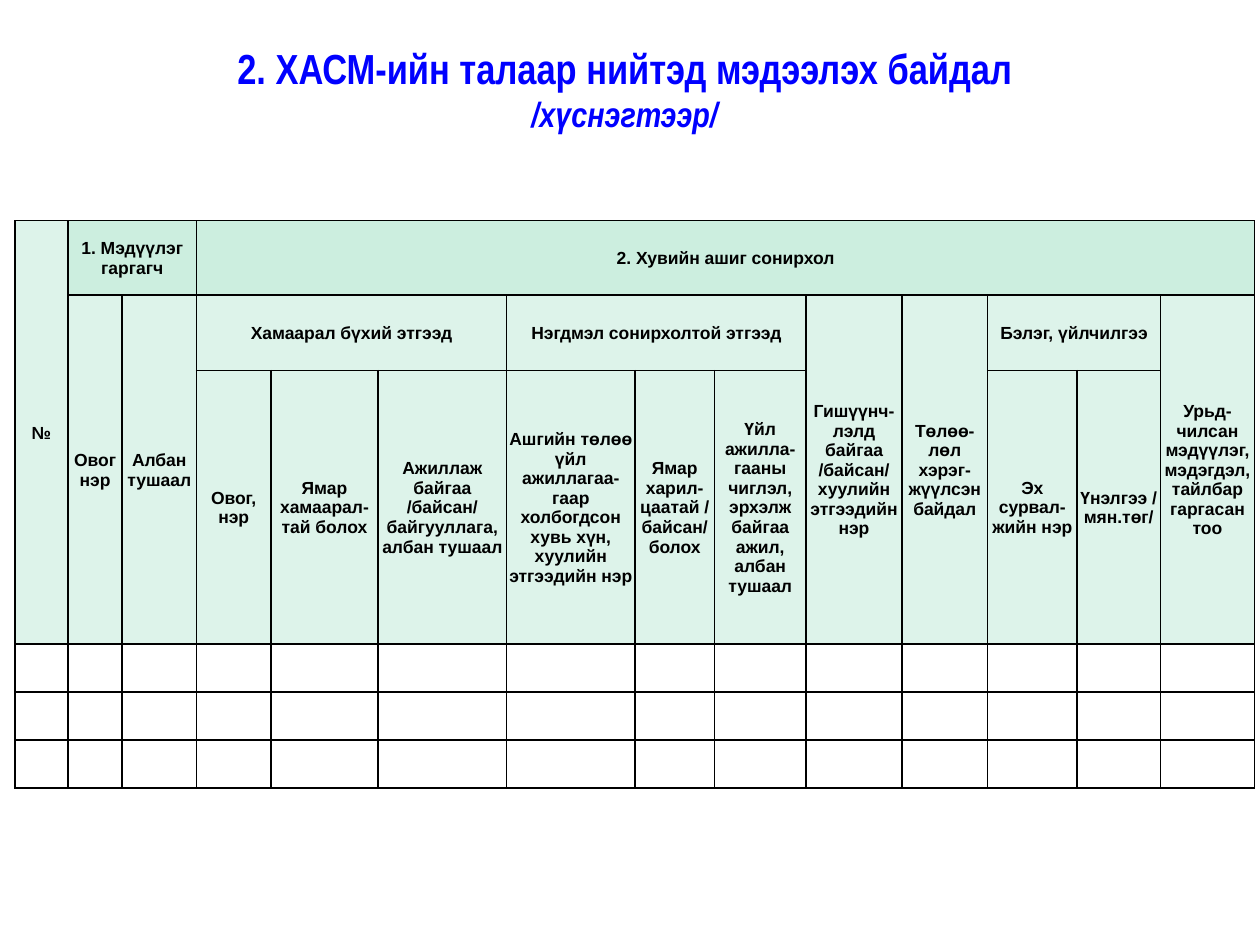
"""Build a slide with an empty form for publishing private interest declarations."""
from lxml import etree
from pptx import Presentation
from pptx import util as u
from pptx.dml.color import RGBColor
from pptx.enum import text
from pptx.oxml import ns

COLORS = {"title": "0000FF", "ink": "000000", "group": "CCEEDF",
          "header": "DDF3EA", "blank": "FFFFFF"}
COLUMN_WIDTHS = [1.07, 1.09, 1.5, 1.5, 2.16, 2.59, 2.59,
                 1.6, 1.85, 1.93, 1.73, 1.8, 1.68, 1.9]
ROW_HEIGHTS = [1.5, 1.52, 5.51] + [0.97] * 3

# row, column, rows spanned, columns spanned, colour, wording
HEADERS = [
    (0, 0, 3, 1, "header", "№"),
    (0, 1, 1, 2, "group", "1. Мэдүүлэг гаргагч"),
    (0, 3, 1, 11, "group", "2. Хувийн ашиг сонирхол"),
    (1, 1, 2, 1, "header", "Овог нэр"),
    (1, 2, 2, 1, "header", "Албан тушаал"),
    (1, 3, 1, 3, "header", "Хамаарал бүхий этгээд"),
    (1, 6, 1, 3, "header", "Нэгдмэл сонирхолтой этгээд"),
    (1, 9, 2, 1, "header", "Гишүүнч-лэлд байгаа /байсан/ хуулийн этгээдийн нэр"),
    (1, 10, 2, 1, "header", "Төлөө-лөл хэрэг-жүүлсэн байдал"),
    (1, 11, 1, 2, "header", "Бэлэг, үйлчилгээ"),
    (1, 13, 2, 1, "header",
     "Урьд-чилсан мэдүүлэг, мэдэгдэл, тайлбар гаргасан тоо"),
    (2, 3, 1, 1, "header", "Овог, нэр"),
    (2, 4, 1, 1, "header", "Ямар хамаарал-тай болох"),
    (2, 5, 1, 1, "header", "Ажиллаж байгаа /байсан/ байгууллага, албан тушаал"),
    (2, 6, 1, 1, "header",
     "Ашгийн төлөө үйл ажиллагаа-гаар холбогдсон хувь хүн, хуулийн этгээдийн нэр"),
    (2, 7, 1, 1, "header", "Ямар харил-цаатай /байсан/ болох"),
    (2, 8, 1, 1, "header",
     "Үйл ажилла-гааны чиглэл, эрхэлж байгаа ажил, албан тушаал"),
    (2, 11, 1, 1, "header", "Эх сурвал-жийн нэр"),
    (2, 12, 1, 1, "header", "Үнэлгээ /мян.төг/"),
]


def add_text(paragraph, wording, *, size, font="Arial", color="ink", italic=False):
    """Append a bold centred run to the paragraph."""
    paragraph.alignment = text.PP_ALIGN.CENTER
    run = paragraph.add_run()
    run.text = wording
    run.font.name = font
    run.font.size = u.Pt(size)
    run.font.bold = True
    run.font.italic = italic
    run.font.color.rgb = RGBColor.from_string(COLORS[color])


def add_title(slide):
    """Place and fill the two-line title."""
    title = slide.shapes.title
    title.left, title.top = u.Cm(0.43), u.Cm(0.84)
    title.width, title.height = u.Cm(24.33), u.Cm(1.9)
    frame = title.text_frame
    frame.auto_size = text.MSO_AUTO_SIZE.NONE
    frame.vertical_anchor = text.MSO_ANCHOR.MIDDLE
    heading = frame.paragraphs[0]
    style = {"font": "Arial Narrow", "color": "title"}
    add_text(heading, "2. ХАСМ-ийн талаар нийтэд мэдээлэх байдал", size=24, **style)
    heading.add_line_break()
    add_text(heading, "/хүснэгтээр/", size=20, italic=True, **style)


def format_cell(cell, color):
    """Give a cell thin margins, a border on each side and a fill."""
    cell.margin_left = cell.margin_right = cell.margin_top = u.Cm(0.03)
    cell.margin_bottom = 0
    cell.vertical_anchor = text.MSO_ANCHOR.MIDDLE
    properties = cell._tc.get_or_add_tcPr()
    for side in ("a:lnL", "a:lnR", "a:lnT", "a:lnB"):
        border = etree.SubElement(properties, ns.qn(side), w=str(u.Pt(1)))
        fill = etree.SubElement(border, ns.qn("a:solidFill"))
        etree.SubElement(fill, ns.qn("a:srgbClr"), val=COLORS["ink"])
    cell.fill.solid()
    cell.fill.fore_color.rgb = RGBColor.from_string(COLORS[color])


def add_form(slide):
    """Add the declaration table with its merged headers and blank rows."""
    form = slide.shapes.add_table(
        len(ROW_HEIGHTS), len(COLUMN_WIDTHS), u.Cm(0.3), u.Cm(4.45),
        u.Cm(sum(COLUMN_WIDTHS)), u.Cm(sum(ROW_HEIGHTS))).table
    for column, width in zip(form.columns, COLUMN_WIDTHS):
        column.width = u.Cm(width)
    for row, height in zip(form.rows, ROW_HEIGHTS):
        row.height = u.Cm(height)

    fills = {(row + down, column + across): color
             for row, column, rows, columns, color, _ in HEADERS
             for down in range(rows) for across in range(columns)}
    for row in range(len(ROW_HEIGHTS)):
        for column in range(len(COLUMN_WIDTHS)):
            format_cell(form.cell(row, column), fills.get((row, column), "blank"))

    for row, column, rows, columns, _, wording in HEADERS:
        header = form.cell(row, column)
        if rows * columns > 1:
            header.merge(form.cell(row + rows - 1, column + columns - 1))
        add_text(header.text_frame.paragraphs[0], wording, size=10)


def main():
    """Create the presentation and save it."""
    deck = Presentation()
    deck.slide_width, deck.slide_height = u.Cm(25.4), u.Cm(19.05)
    slide = deck.slides.add_slide(deck.slide_layouts[5])
    add_title(slide)
    add_form(slide)
    deck.save("out.pptx")


if __name__ == "__main__":
    main()
